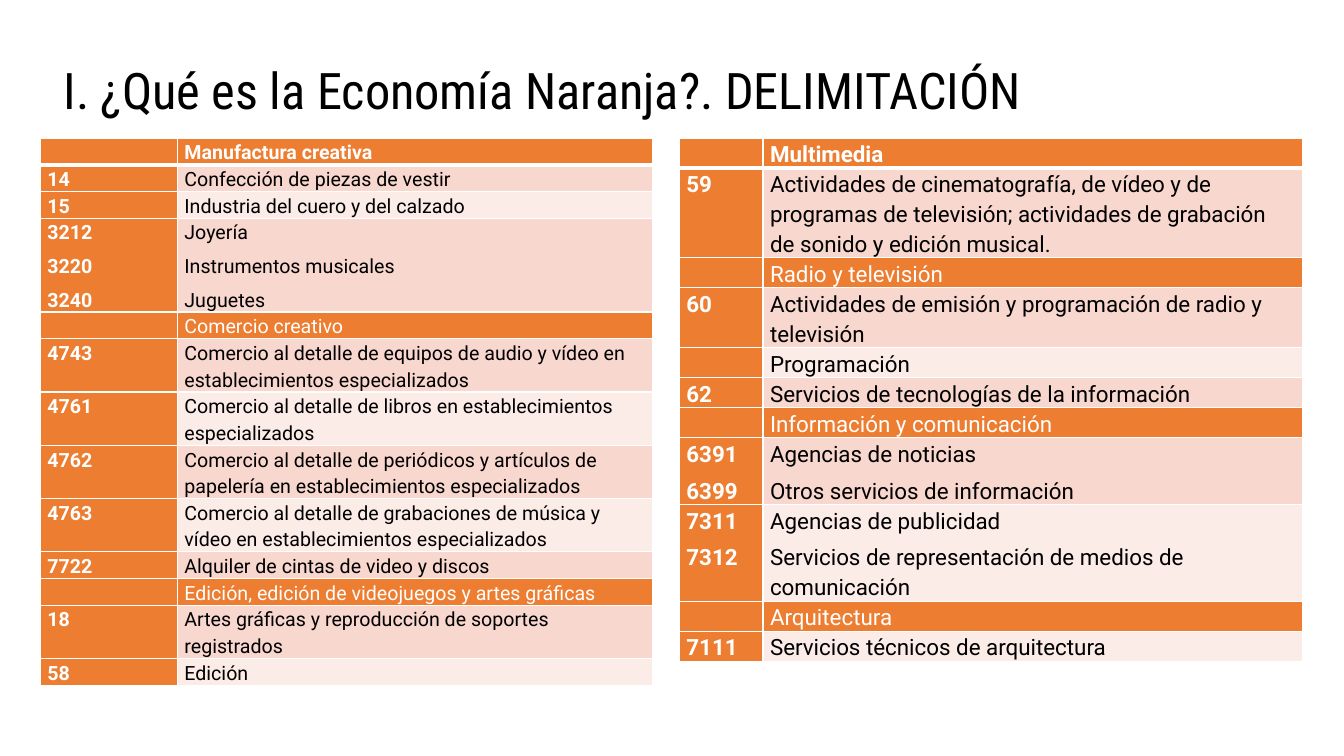
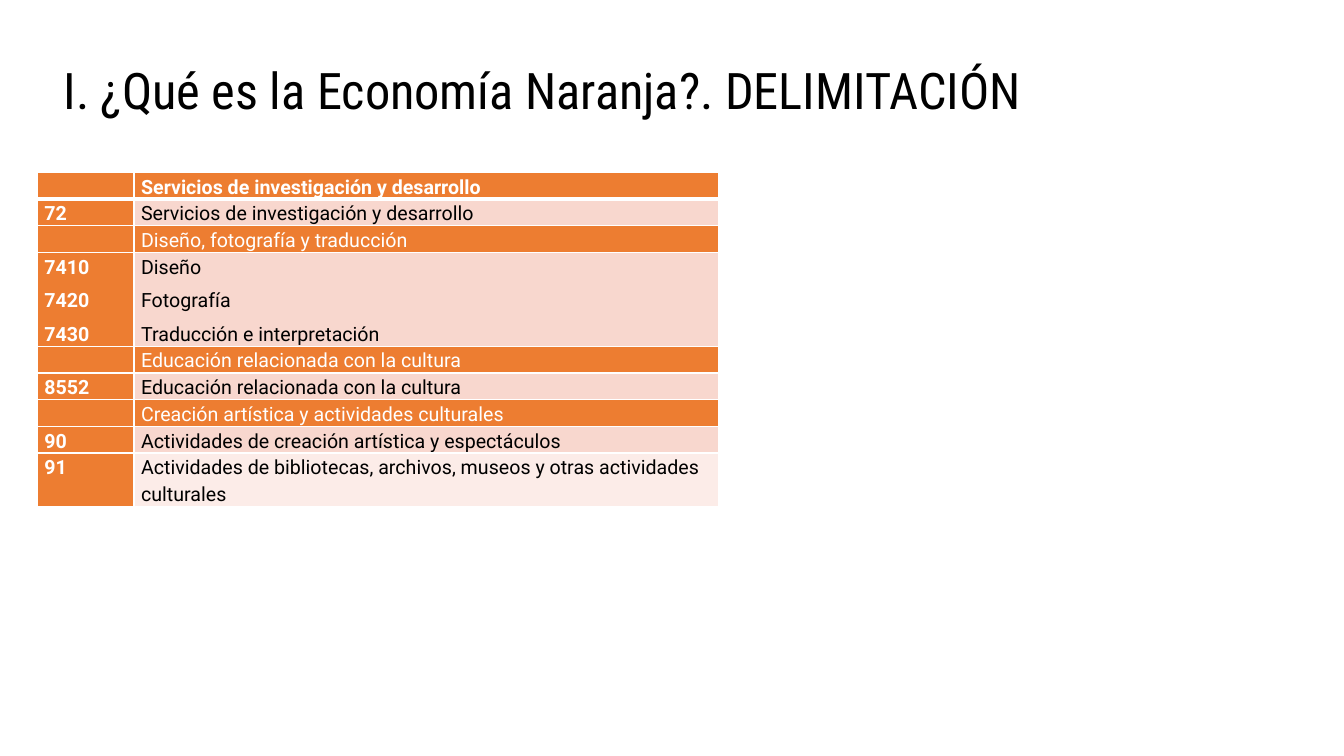
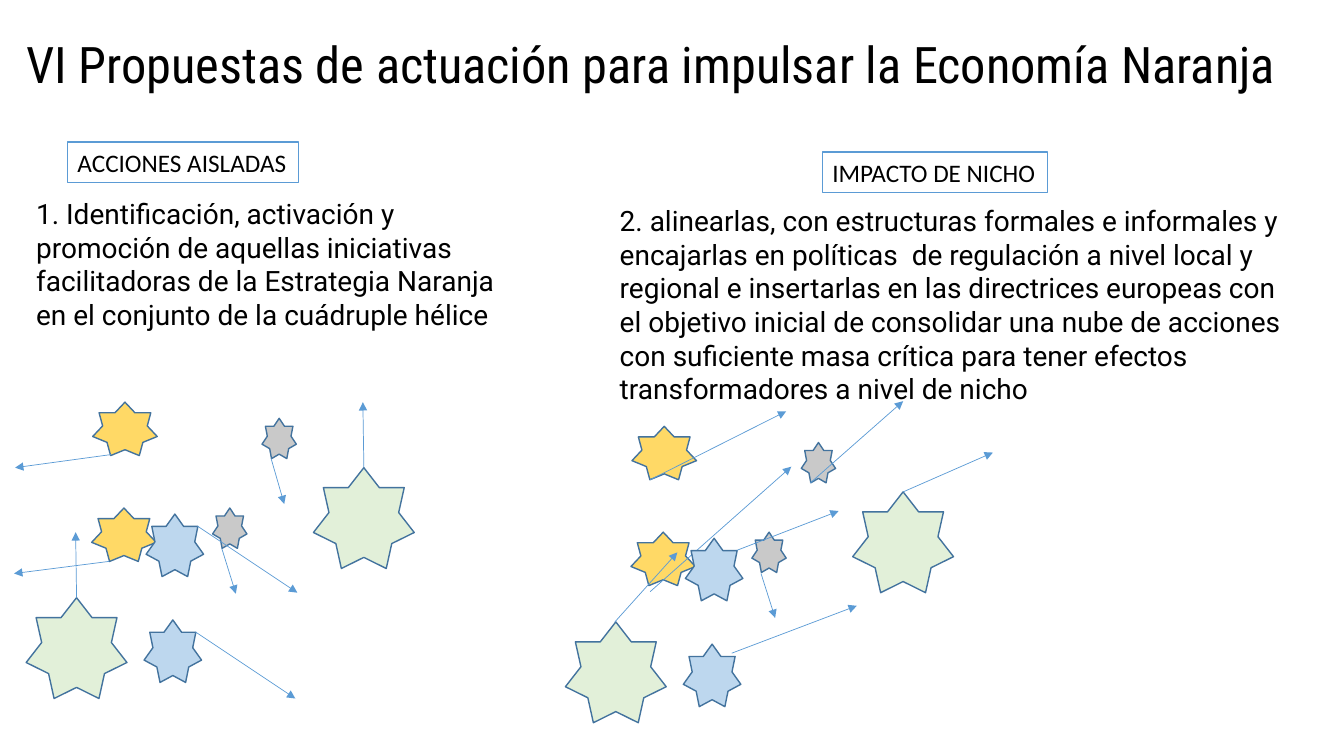
import lxml.etree
import pptx
import pptx.dml.color
import pptx.enum.shapes
import pptx.enum.text
import pptx.oxml.ns
import pptx.util

PX = 9144
COLORS = {
    "white": "FFFFFF", "black": "000000", "orange": "ED7D31", "salmon": "F8D7CE",
    "blush": "FCECE8", "yellow": "FFD966", "sky": "BDD7EE", "mint": "E2F0D9",
    "gray": "C9C9C9", "outline": "43739E", "blue": "5B9BD5",
}
STAR_SIZES = {"yellow": (64, 53), "sky": (57, 62), "mint": (100, 100), "gray": (34, 40)}

DELIMITATION = "I. ¿Qué es la Economía Naranja?. DELIMITACIÓN"
MANUFACTURING = [
    (None, "Manufactura creativa"),
    ("14", "Confección de piezas de vestir"),
    ("15", "Industria del cuero y del calzado"),
    ("3212\n3220\n3240", "Joyería\nInstrumentos musicales\nJuguetes"),
    (None, "Comercio creativo"),
    ("4743", "Comercio al detalle de equipos de audio y vídeo en establecimientos especializados"),
    ("4761", "Comercio al detalle de libros en establecimientos especializados"),
    ("4762", "Comercio al detalle de periódicos y artículos de papelería en establecimientos especializados"),
    ("4763", "Comercio al detalle de grabaciones de música y vídeo en establecimientos especializados"),
    ("7722", "Alquiler de cintas de video y discos"),
    (None, "Edición, edición de videojuegos y artes gráficas"),
    ("18", "Artes gráficas y reproducción de soportes registrados"),
    ("58", "Edición"),
]
MULTIMEDIA = [
    (None, "Multimedia"),
    ("59", "Actividades de cinematografía, de vídeo y de programas de televisión; "
           "actividades de grabación de sonido y edición musical."),
    (None, "Radio y televisión"),
    ("60", "Actividades de emisión y programación de radio y televisión"),
    ("", "Programación"),
    ("62", "Servicios de tecnologías de la información"),
    (None, "Información y comunicación"),
    ("6391\n6399", "Agencias de noticias\nOtros servicios de información"),
    ("7311\n7312", "Agencias de publicidad\nServicios de representación de medios de comunicación"),
    (None, "Arquitectura"),
    ("7111", "Servicios técnicos de arquitectura"),
]
RESEARCH = [
    (None, "Servicios de investigación y desarrollo"),
    ("72", "Servicios de investigación y desarrollo"),
    (None, "Diseño, fotografía y traducción"),
    ("7410\n7420\n7430", "Diseño\nFotografía\nTraducción e interpretación"),
    (None, "Educación relacionada con la cultura"),
    ("8552", "Educación relacionada con la cultura"),
    (None, "Creación artística y actividades culturales"),
    ("90", "Actividades de creación artística y espectáculos"),
    ("91", "Actividades de bibliotecas, archivos, museos y otras actividades culturales"),
]
IDENTIFICATION = (
    "1. Identificación, activación y promoción de aquellas iniciativas facilitadoras "
    "de la Estrategia Naranja en el conjunto de la cuádruple hélice"
)
ALIGNMENT = (
    "2. alinearlas, con estructuras formales e informales y encajarlas en políticas  de regulación "
    "a nivel local y regional e insertarlas en las directrices europeas con el objetivo inicial de "
    "consolidar una nube de acciones con suficiente masa crítica para tener efectos transformadores "
    "a nivel de nicho"
)
STARS = [
    ("yellow", 91, 504), ("sky", 143, 615), ("mint", 26, 593), ("gray", 211, 504),
    ("yellow", 92, 399), ("sky", 145, 510), ("mint", 311, 464), ("gray", 260, 415),
]
SCATTERED = [
    (108, 557, 14, 569), (194, 627, 293, 693), (76, 593, 75, 528), (220, 544, 234, 589),
    (110, 451, 15, 464), (196, 522, 295, 588), (361, 464, 360, 399), (269, 455, 282, 500),
]
ALIGNED = [
    (645, 587, 785, 463), (726, 648, 850, 601), (610, 617, 672, 548), (755, 569, 769, 613),
    (645, 476, 780, 408), (731, 546, 832, 507), (896, 488, 985, 449), (804, 479, 896, 398),
]


def px(*lengths):
    return [length * PX for length in lengths]


def rgb(color):
    return pptx.dml.color.RGBColor.from_string(COLORS[color])


def assign(target, values):
    for attribute, value in values.items():
        setattr(target, attribute, value)


def add_xml(parent, tag, **attributes):
    return lxml.etree.SubElement(parent, pptx.oxml.ns.qn(tag), attributes)


class Deck:
    FRAME = {
        "auto_size": pptx.enum.text.MSO_AUTO_SIZE.NONE,
        "vertical_anchor": pptx.enum.text.MSO_ANCHOR.TOP,
        "margin_left": 10 * PX, "margin_right": 10 * PX,
        "margin_top": 5 * PX, "margin_bottom": 5 * PX,
    }
    CELL = {"margin_left": 7 * PX, "margin_right": 7 * PX, "margin_top": 0, "margin_bottom": 0}
    CELL_PARAGRAPH = {"line_spacing": 1.15, "space_before": pptx.util.Pt(5)}
    PLAIN_TABLE = {"first_row": False, "horz_banding": False}
    ROW_HEIGHT = 17

    def __init__(self):
        self.deck = pptx.Presentation()
        assign(self.deck, {"slide_width": 12192000, "slide_height": 6858000})
        self.slide = None

    def add_text(self, paragraph, text, font, size, color="black", bold=False):
        paragraph.alignment = pptx.enum.text.PP_ALIGN.LEFT
        run = paragraph.add_run()
        run.text = text
        assign(run.font, {"name": font, "size": pptx.util.Pt(size), "bold": bold})
        run.font.color.rgb = rgb(color)

    def fill_frame(self, shape, text, font, size, wrap=True):
        assign(shape.text_frame, {**self.FRAME, "word_wrap": wrap})
        self.add_text(shape.text_frame.paragraphs[0], text, font, size)

    def start(self, title, left, top, width, height):
        self.slide = self.deck.slides.add_slide(self.deck.slide_layouts[5])
        heading = self.slide.shapes.title
        box = zip(("left", "top", "width", "height"), px(left, top, width, height))
        assign(heading, dict(box))
        self.fill_frame(heading, title, "Roboto Condensed", 36)

    def body(self, text, *box):
        self.fill_frame(self.slide.shapes.add_textbox(*px(*box)), text, "Roboto", 20)

    def shape(self, kind, fill, line, *box):
        shape = self.slide.shapes.add_shape(kind, *px(*box))
        shape.shadow.inherit = False
        shape.fill.solid()
        shape.fill.fore_color.rgb = rgb(fill)
        shape.line.color.rgb = rgb(line)
        shape.line.width = pptx.util.Pt(1)
        return shape

    def label(self, text, *box):
        label = self.shape(pptx.enum.shapes.MSO_SHAPE.RECTANGLE, "white", "blue", *box)
        self.fill_frame(label, text, "Calibri", 18, wrap=False)

    def star(self, color, left, top):
        kind = pptx.enum.shapes.MSO_SHAPE.STAR_7_POINT
        self.shape(kind, color, "outline", left, top, *STAR_SIZES[color])

    def arrow(self, *ends):
        straight = pptx.enum.shapes.MSO_CONNECTOR.STRAIGHT
        arrow = self.slide.shapes.add_connector(straight, *px(*ends))
        arrow.line.color.rgb = rgb("blue")
        arrow.line.width = pptx.util.Pt(0.5)
        add_xml(arrow.line._get_or_add_ln(), "a:tailEnd", type="triangle")
        add_xml(arrow._element.spPr, "a:effectLst")

    def cell(self, cell, text, size, fill, color, bold, top, bottom):
        assign(cell, self.CELL)
        properties = cell._tc.get_or_add_tcPr()
        for side, points in (("L", 1), ("R", 1), ("T", top), ("B", bottom)):
            border = add_xml(properties, f"a:ln{side}", w=str(int(pptx.util.Pt(points))))
            add_xml(add_xml(border, "a:solidFill"), "a:srgbClr", val=COLORS["white"])
        cell.fill.solid()
        cell.fill.fore_color.rgb = rgb(fill)
        frame = cell.text_frame
        for index, line in enumerate(text.split("\n")):
            paragraph = frame.add_paragraph() if index else frame.paragraphs[0]
            assign(paragraph, self.CELL_PARAGRAPH)
            if line:
                self.add_text(paragraph, line, "Roboto", size, color, bold)
            else:
                add_xml(paragraph._p, "a:endParaRPr", sz=str(size * 100))

    def table(self, rows, left, top, widths, size):
        box = px(left, top, sum(widths), len(rows) * self.ROW_HEIGHT)
        table = self.slide.shapes.add_table(len(rows), len(widths), *box).table
        assign(table, self.PLAIN_TABLE)
        for column, width in zip(table.columns, px(*widths)):
            column.width = width
        for index, (code, activity) in enumerate(rows):
            if code is None:
                fill, color = "orange", "white"
            else:
                fill, color = ("salmon" if index % 2 else "blush"), "black"
            borders = (3 if index == 1 else 1, 3 if index == 0 else 1)
            self.cell(table.cell(index, 0), code or "", size, "orange", "white", True, *borders)
            self.cell(table.cell(index, 1), activity, size, fill, color, index == 0, *borders)


def main():
    deck = Deck()
    heading_box = (53, 54, 980, 71)

    deck.start(DELIMITATION, *heading_box)
    deck.table(MANUFACTURING, 40, 137, (136, 471), 14)
    deck.table(MULTIMEDIA, 674, 137, (83, 535), 16)

    deck.start(DELIMITATION, *heading_box)
    deck.table(RESEARCH, 37, 171, (96, 580), 14)

    deck.start("VI Propuestas de actuación para impulsar la Economía Naranja", 16, 28, 1284, 131)
    deck.body(IDENTIFICATION, 26, 190, 504, 145)
    deck.body(ALIGNMENT, 605, 197, 684, 212)
    for shift_x, shift_y, arrows in ((0, 0, SCATTERED), (535, 24, ALIGNED)):
        for (color, left, top), ends in zip(STARS, arrows):
            deck.star(color, left + shift_x, top + shift_y)
            deck.arrow(*ends)
    deck.label("ACCIONES AISLADAS", 67, 141, 229, 40)
    deck.label("IMPACTO DE NICHO", 816, 151, 223, 40)

    deck.deck.save("out.pptx")


if __name__ == "__main__":
    main()
